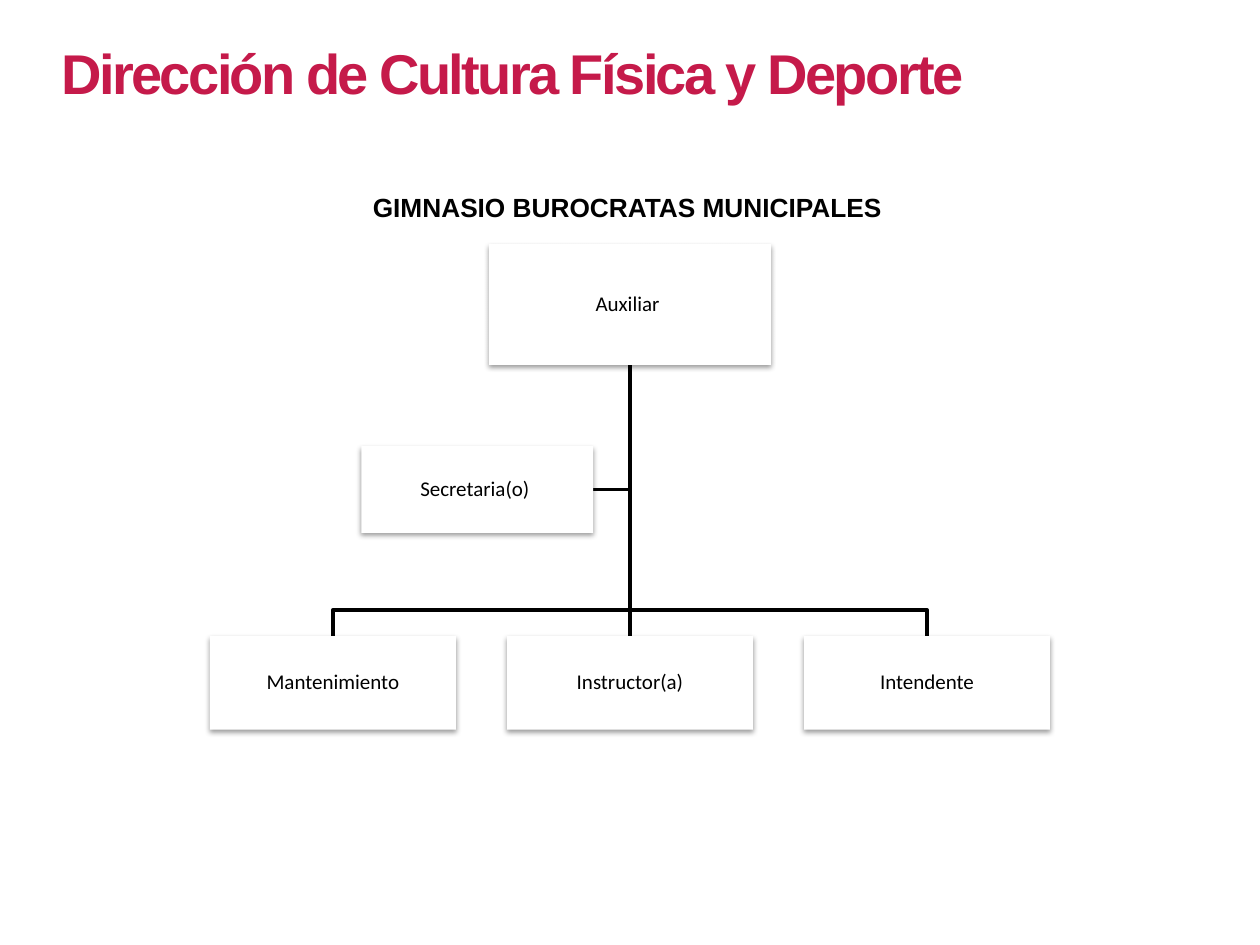
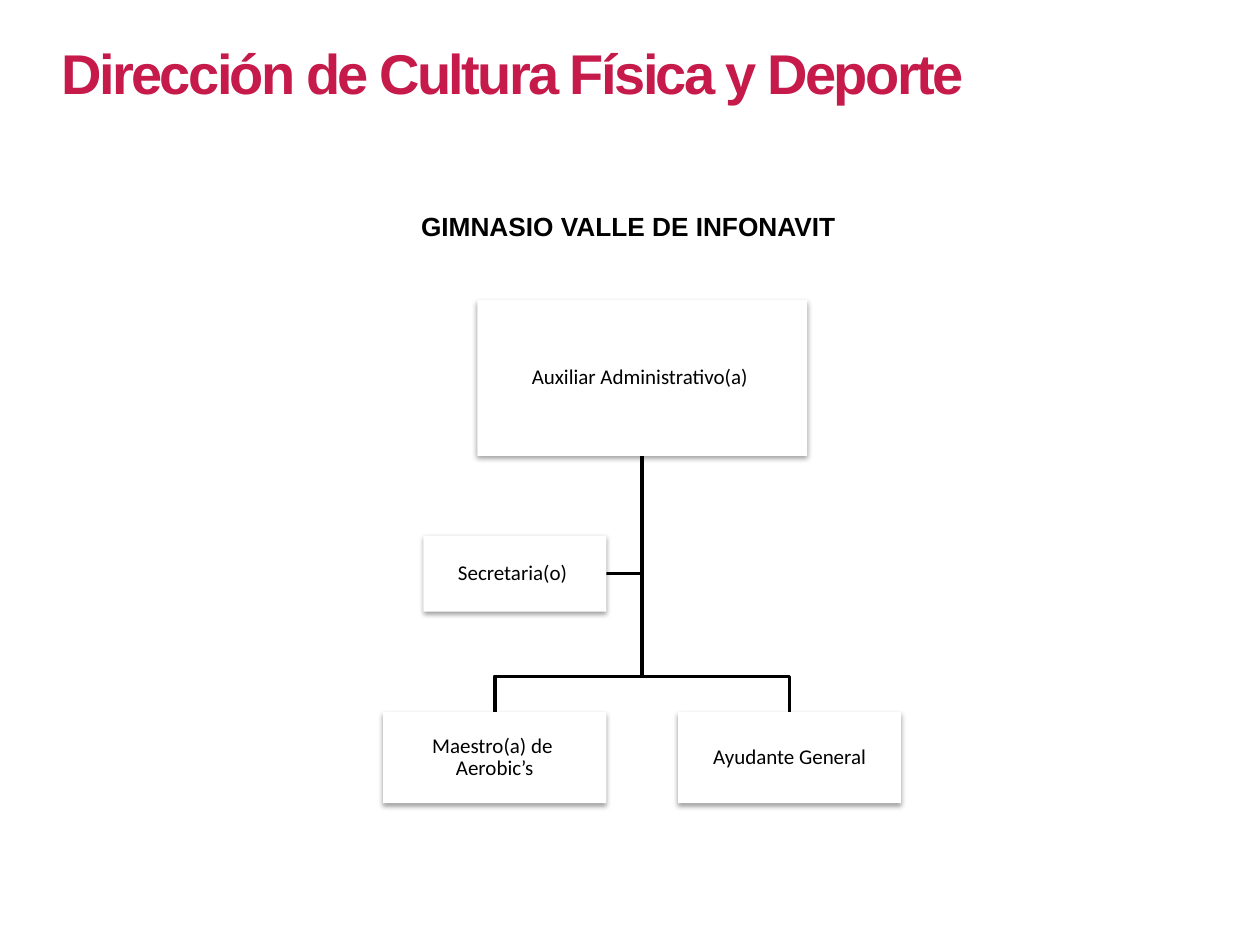
from lxml.etree import SubElement
from pptx import Presentation
from pptx.dml.color import RGBColor
from pptx.enum.shapes import MSO_CONNECTOR, MSO_SHAPE
from pptx.enum.text import MSO_ANCHOR, MSO_AUTO_SIZE, PP_ALIGN
from pptx.oxml.ns import qn
from pptx.util import Pt

CRIMSON = RGBColor(0xC5, 0x1A, 0x4A)
BLACK = RGBColor(0, 0, 0)
WHITE = RGBColor(255, 255, 255)
TITLE = "Dirección de Cultura Física y Deporte"


def write_text(shape, text, font="Arial", size=15, color=BLACK, bold=False,
               align=PP_ALIGN.LEFT, line_spacing=None, letter_spacing=None):
    paragraph = shape.text_frame.paragraphs[0]
    paragraph.text = text
    paragraph.alignment = align
    paragraph.line_spacing = line_spacing
    for run in paragraph.runs:
        run.font.name = font
        run.font.size = Pt(size)
        run.font.bold = bold
        run.font.color.rgb = color
        if letter_spacing is not None:
            run._r.get_or_add_rPr().set("spc", str(round(letter_spacing * 100)))


def add_shadow(shape):
    """Give the shape a soft black shadow that falls straight down."""
    effects = SubElement(shape._element.spPr, qn("a:effectLst"))
    shadow = SubElement(effects, qn("a:outerShdw"), blurRad=str(Pt(3.1)),
                        dist=str(Pt(1.6)), dir="5400000", rotWithShape="0")
    color = SubElement(shadow, qn("a:srgbClr"), val=str(BLACK))
    SubElement(color, qn("a:alpha"), val="38000")


class OrgChartDeck:
    line_width = 2
    inset = 0.7

    def __init__(self):
        self.presentation = Presentation()
        self.presentation.slide_width = Pt(720)
        self.presentation.slide_height = Pt(540)
        self.slide = None

    def add_slide(self):
        self.slide = self.presentation.slides.add_slide(
            self.presentation.slide_layouts[6])

    def text_box(self, text, left, top, width, height, wrap=True, **text_format):
        box = self.slide.shapes.add_textbox(Pt(left), Pt(top), Pt(width), Pt(height))
        box.text_frame.word_wrap = wrap
        box.text_frame.auto_size = MSO_AUTO_SIZE.SHAPE_TO_FIT_TEXT
        write_text(box, text, **text_format)

    def position_box(self, text, left, top, width, height):
        shape = self.slide.shapes.add_shape(
            MSO_SHAPE.RECTANGLE, Pt(left), Pt(top), Pt(width), Pt(height))
        shape.fill.solid()
        shape.fill.fore_color.rgb = WHITE
        shape.line.fill.background()
        add_shadow(shape)
        frame = shape.text_frame
        frame.word_wrap = True
        frame.vertical_anchor = MSO_ANCHOR.MIDDLE
        frame.margin_left = frame.margin_right = Pt(self.inset)
        frame.margin_top = frame.margin_bottom = Pt(self.inset)
        write_text(shape, text, font="Calibri", size=12,
                   align=PP_ALIGN.CENTER, line_spacing=0.9)

    def style_line(self, shape):
        shape.line.color.rgb = BLACK
        shape.line.width = Pt(self.line_width)
        SubElement(shape._element.spPr, qn("a:effectLst"))

    def straight_line(self, x, top, bottom):
        connector = self.slide.shapes.add_connector(
            MSO_CONNECTOR.STRAIGHT, Pt(x), Pt(top), Pt(x), Pt(bottom))
        self.style_line(connector)

    def bent_line(self, *points):
        start, *rest = [(Pt(x), Pt(y)) for x, y in points]
        builder = self.slide.shapes.build_freeform(*start)
        builder.add_line_segments(rest, close=False)
        shape = builder.convert_to_shape()
        shape.fill.background()
        self.style_line(shape)

    def org_chart(self, center, head, assistant, staff, staff_size, staff_top,
                  pitch, branch_y):
        """Draw a head, an assistant to its left and an even row of staff.

        head is (text, top, width, height); assistant is
        (text, right, top, width, height).
        """
        head_text, head_top, head_width, head_height = head
        text, right, top, width, height = assistant
        head_bottom = head_top + head_height
        middle = top + height / 2
        staff_width, staff_height = staff_size
        first = center - pitch * (len(staff) - 1) / 2
        staff_centers = [first + pitch * i for i in range(len(staff))]

        self.bent_line((center, head_bottom), (center, middle), (right, middle))
        for x in staff_centers:
            if x == center:
                self.straight_line(x, head_bottom, staff_top)
            else:
                self.bent_line((center, head_bottom), (center, branch_y),
                               (x, branch_y), (x, staff_top))
        self.position_box(head_text, center - head_width / 2, head_top,
                          head_width, head_height)
        for x, name in zip(staff_centers, staff):
            self.position_box(name, x - staff_width / 2, staff_top,
                              staff_width, staff_height)
        self.position_box(text, right - width, top, width, height)

    def gym_slide(self, gym, gym_left, gym_top, gym_width, **chart):
        self.add_slide()
        self.text_box(gym, gym_left, gym_top, gym_width, 25, wrap=False, bold=True)
        self.text_box(TITLE, 28, 18.5, 554, 46, size=32, color=CRIMSON,
                      bold=True, letter_spacing=-1.5)
        self.org_chart(**chart)


def main():
    deck = OrgChartDeck()
    deck.gym_slide(
        "GIMNASIO BUROCRATAS MUNICIPALES", 206, 106, 308,
        center=360,
        head=("Auxiliar ", 139.5, 161, 69),
        assistant=("Secretaria(o) ", 339, 255, 132.5, 49.5),
        staff=["Mantenimiento", "Instructor(a)", "Intendente"],
        staff_size=(140.5, 53.5), staff_top=363.5, pitch=169.75, branch_y=348.5)
    deck.gym_slide(
        "GIMNASIO VALLE DE INFONAVIT", 233.5, 116.5, 253,
        center=367,
        head=("Auxiliar Administrativo(a) ", 171.5, 188.5, 89),
        assistant=("Secretaria(o) ", 346.5, 306, 104.5, 43.5),
        staff=["Maestro(a) de \vAerobic’s", "Ayudante General"],
        staff_size=(127.5, 52), staff_top=407, pitch=168.5, branch_y=386.5)
    deck.presentation.save("out.pptx")


if __name__ == "__main__":
    main()
